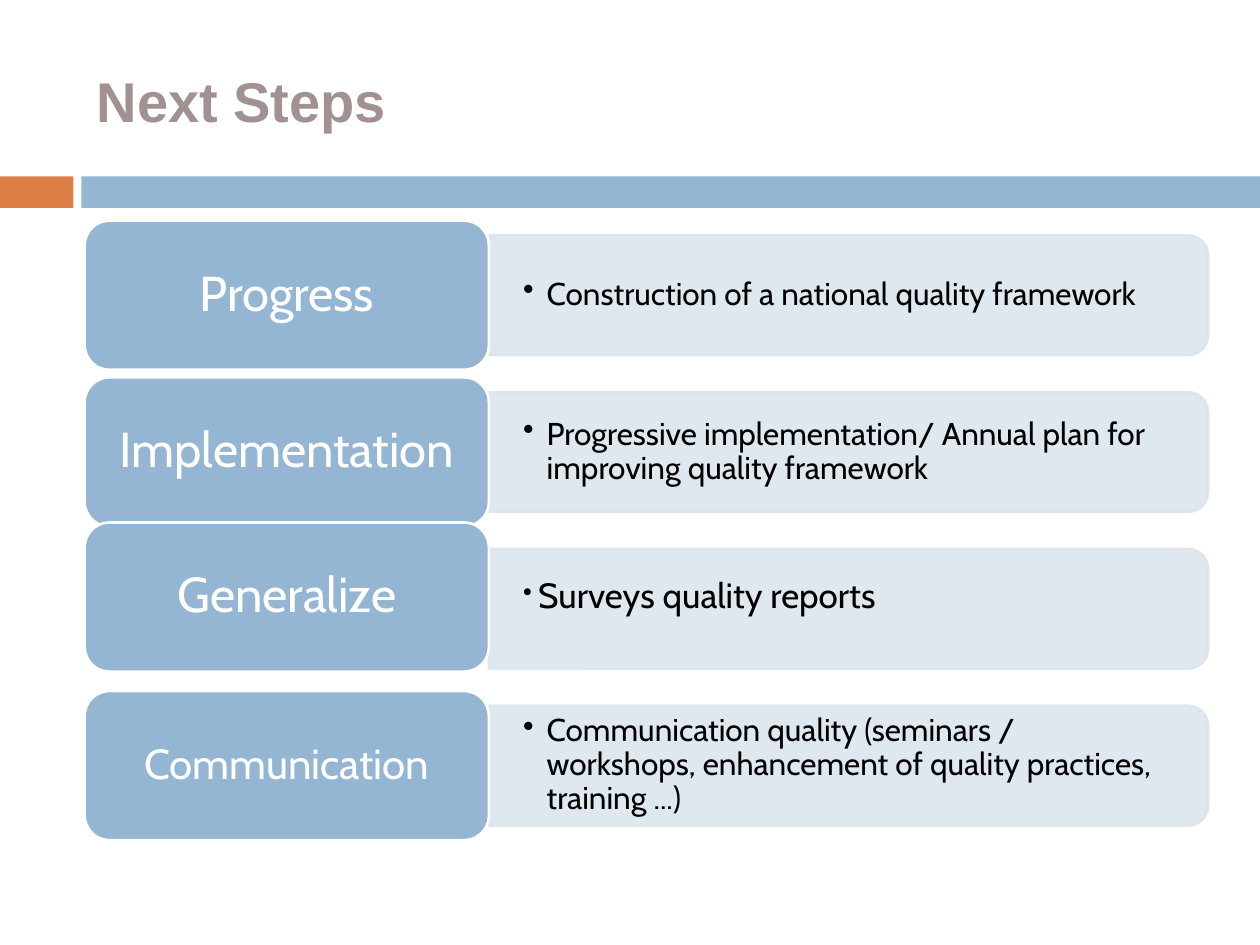
from dataclasses import dataclass

from lxml import etree
from pptx import Presentation
from pptx.dml.color import RGBColor
from pptx.enum.shapes import MSO_SHAPE
from pptx.enum.text import MSO_ANCHOR, PP_ALIGN
from pptx.oxml.ns import qn
from pptx.util import Pt

RECT = MSO_SHAPE.RECTANGLE
ROUNDED = MSO_SHAPE.ROUNDED_RECTANGLE
TOP_ROUNDED = MSO_SHAPE.ROUND_2_SAME_RECTANGLE
MIDDLE = MSO_ANCHOR.MIDDLE
CENTER, LEFT = PP_ALIGN.CENTER, PP_ALIGN.LEFT

COLORS = {
    "accent": "DD8047",
    "blue": "94B6D2",
    "panel": "DCE5EE",
    "title": "A19191",
    "white": "FFFFFF",
    "black": "000000",
}
BODY_FONT, TITLE_FONT = "Cabin", "Arial"

BAND_TOP, BAND_HEIGHT = 100.8, 18
FIRST_CENTER, ROW_PITCH = 168.7, 89.6
LABEL_LEFT, LABEL_WIDTH, LABEL_HEIGHT = 48.4, 231, 85.2
PANEL_LEFT, PANEL_WIDTH, PANEL_HEIGHT = 279.4, 411, 68.4
DETAIL_WIDTH, DETAIL_HEIGHT = 407.6, 61.4


@dataclass(frozen=True)
class Step:
    label: str
    detail: str
    label_size: float = 28
    detail_size: float = 18
    hanging: float = 13.5
    bullet_percent: int = 100
    shift: float = 0


STEPS = [
    Step("Progress", "Construction of a national quality framework"),
    Step("Implementation",
         "Progressive implementation/ Annual plan for improving quality framework"),
    Step("Generalize", "Surveys quality reports", detail_size=20,
         hanging=8.6, bullet_percent=75, shift=-6.7),
    Step("Communication",
         "Communication quality (seminars / workshops, enhancement of "
         "quality practices, training ...)", label_size=24),
]


def rgb(name: str) -> RGBColor:
    return RGBColor.from_string(COLORS[name])


def add_block(slide, kind, left: float, top: float, width: float, height: float,
              fill: str, line: str | None = None):
    block = slide.shapes.add_shape(kind, Pt(left), Pt(top), Pt(width), Pt(height))
    block.shadow.inherit = False
    block.fill.solid()
    block.fill.fore_color.rgb = rgb(fill)
    if line:
        block.line.color.rgb = rgb(line)
        block.line.width = Pt(1.5)
    else:
        block.line.fill.background()
    return block


def write(holder, text: str, size: float, color: str, font: str = BODY_FONT,
          align=LEFT, bold: bool = False, spacing: float = 0.9,
          insets: tuple[float, float] = (7.2, 3.6)):
    """Fill a shape or text box with one paragraph; insets are (sides, top and bottom)."""
    frame = holder.text_frame
    frame.word_wrap = True
    frame.vertical_anchor = MIDDLE
    frame.margin_left = frame.margin_right = Pt(insets[0])
    frame.margin_top = frame.margin_bottom = Pt(insets[1])
    paragraph = frame.paragraphs[0]
    paragraph.alignment = align
    paragraph.line_spacing = spacing
    run = paragraph.add_run()
    run.text = text
    run.font.name = font
    run.font.size = Pt(size)
    run.font.bold = bold
    run.font.color.rgb = rgb(color)
    return paragraph


def add_bullet(paragraph, hanging: float, percent: int) -> None:
    properties = paragraph._p.get_or_add_pPr()
    properties.set("marL", str(Pt(hanging)))
    properties.set("indent", str(-Pt(hanging)))
    etree.SubElement(properties, qn("a:buSzPct"), val=str(percent * 1000))
    etree.SubElement(properties, qn("a:buChar"), char="•")


def make_translucent(block, percent: int) -> None:
    """Set the opacity of both fill and outline."""
    for color in block._element.spPr.iter(qn("a:srgbClr")):
        etree.SubElement(color, qn("a:alpha"), val=str(percent * 1000))


def add_panel(slide, center: float) -> None:
    """Add a panel turned a quarter, so that its rounded corners are on the right."""
    panel = add_block(slide, TOP_ROUNDED,
                      PANEL_LEFT + (PANEL_WIDTH - PANEL_HEIGHT) / 2,
                      center - PANEL_WIDTH / 2,
                      PANEL_HEIGHT, PANEL_WIDTH, "panel", "panel")
    panel.rotation = 90
    make_translucent(panel, 90)


def add_step(slide, step: Step, center: float) -> None:
    add_panel(slide, center)
    text_center = center + step.shift
    detail = slide.shapes.add_textbox(
        Pt(PANEL_LEFT), Pt(text_center - DETAIL_HEIGHT / 2),
        Pt(DETAIL_WIDTH), Pt(DETAIL_HEIGHT))
    paragraph = write(detail, step.detail, step.detail_size, "black",
                      insets=(19.5, 9.75))
    add_bullet(paragraph, step.hanging, step.bullet_percent)
    label = add_block(slide, ROUNDED, LABEL_LEFT, text_center - LABEL_HEIGHT / 2,
                      LABEL_WIDTH, LABEL_HEIGHT, "blue", "white")
    write(label, step.label, step.label_size, "white", align=CENTER)


def main() -> None:
    deck = Presentation()
    deck.slide_width, deck.slide_height = Pt(720), Pt(540)
    slide = deck.slides.add_slide(deck.slide_layouts[6])

    add_block(slide, RECT, 0, BAND_TOP, 42, BAND_HEIGHT, "accent")
    add_block(slide, RECT, 46.5, BAND_TOP, 673.5, BAND_HEIGHT, "blue")
    title = slide.shapes.add_textbox(Pt(48.2), Pt(18), Pt(642), Pt(78))
    write(title, "Next Steps", 32, "title", TITLE_FONT, bold=True, spacing=1)

    for row, step in enumerate(STEPS):
        add_step(slide, step, FIRST_CENTER + row * ROW_PITCH)
    deck.save("out.pptx")


if __name__ == "__main__":
    main()
